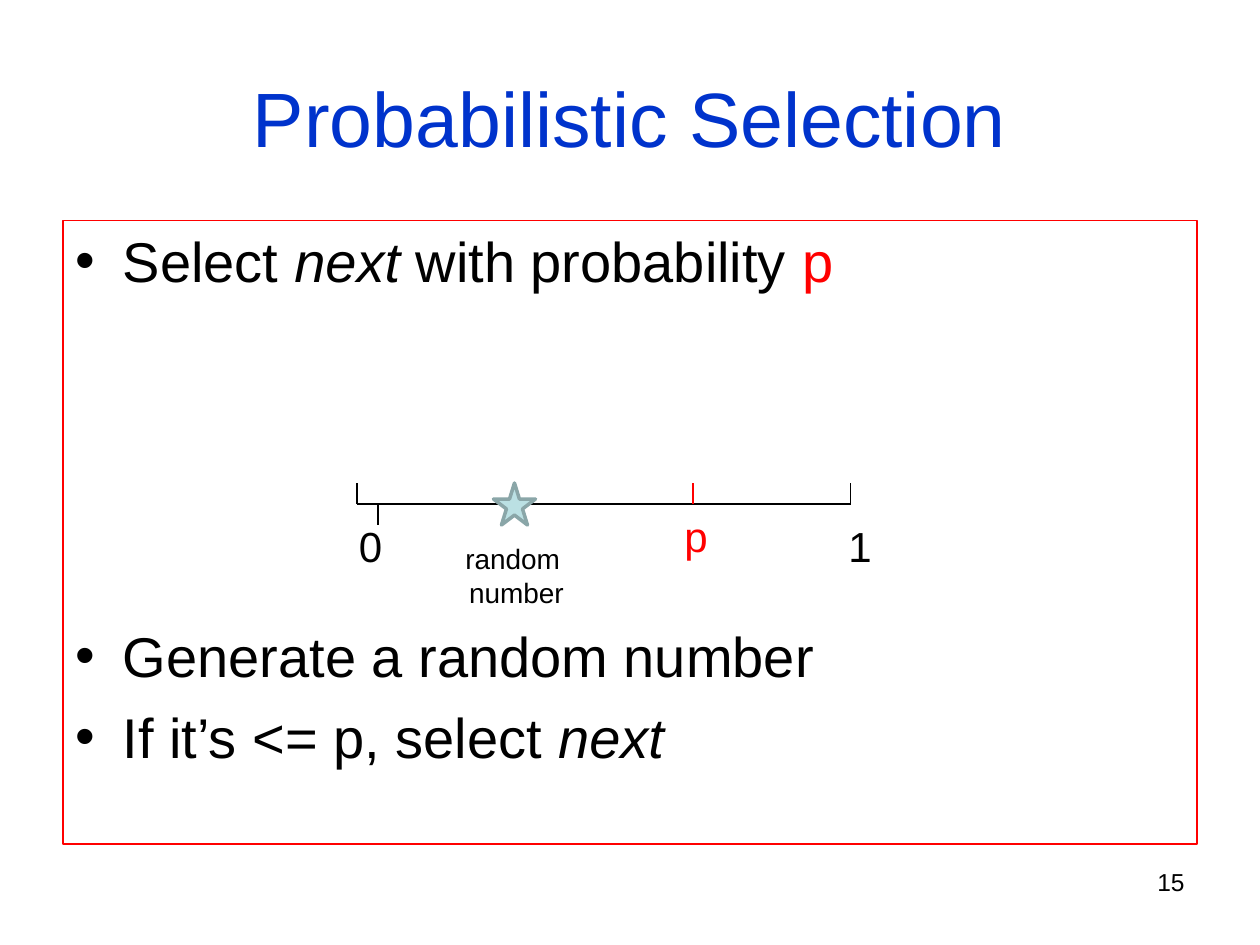
"""Build the slide on probabilistic selection."""
from lxml import etree
from pptx import Presentation
from pptx.dml.color import RGBColor
from pptx.enum.shapes import MSO_CONNECTOR, MSO_SHAPE
from pptx.enum.text import MSO_ANCHOR, MSO_AUTO_SIZE, PP_ALIGN
from pptx.oxml.ns import qn
from pptx.util import Pt

SCALE = 9525
LINE = MSO_CONNECTOR.STRAIGHT
STAR = MSO_SHAPE.STAR_5_POINT
TOP, MID = MSO_ANCHOR.TOP, MSO_ANCHOR.MIDDLE
LEFT, RIGHT, CENTER = PP_ALIGN.LEFT, PP_ALIGN.RIGHT, PP_ALIGN.CENTER
FIXED = MSO_AUTO_SIZE.NONE
HUES = {
    "black": "000000", "red": "FF0000", "blue": "0033CC",
    "pale": "BBE0E3", "edge": "8AA6A8",
}


def px(*vals):
    return [val * SCALE for val in vals]


def hue(name):
    return RGBColor.from_string(HUES[name])


class Deck:
    """Hold the text style and the current slide."""

    def __init__(self, wide, high, font):
        self.file = Presentation()
        self.file.slide_width, self.file.slide_height = px(wide, high)
        self.slide = self.file.slides.add_slide(self.file.slide_layouts[1])
        self.font = font

    def place(self, shape, box):
        names = ("left", "top", "width", "height")
        for name, val in zip(names, px(*box)):
            setattr(shape, name, val)

    def frame(self, shape, **form):
        for name, val in form.items():
            setattr(shape.text_frame, name, val)

    def style(self, para, parts, size, **form):
        for name, val in form.items():
            setattr(para, name, val)
        for text, color, slant in parts:
            run = para.add_run()
            run.text = text
            look = {"name": self.font, "size": Pt(size), "italic": slant}
            for name, val in look.items():
                setattr(run.font, name, val)
            run.font.color.rgb = hue(color)

    def fill(self, shape, rows, size, **form):
        text = shape.text_frame
        for num, (parts, gap) in enumerate(rows):
            para = text.add_paragraph() if num else text.paragraphs[0]
            self.style(para, parts, size, space_before=Pt(gap), **form)

    def title(self, box, text, color, size):
        shape = self.slide.shapes.title
        self.place(shape, box)
        self.frame(shape, vertical_anchor=MID, auto_size=FIXED)
        self.fill(shape, [([(text, color, False)], 0)], size, alignment=CENTER)

    def body(self, box, rows, size, color):
        shape = self.slide.placeholders[1]
        self.place(shape, box)
        self.frame(shape, vertical_anchor=TOP, auto_size=FIXED)
        self.fill(shape, rows, size)
        shape.line.color.rgb = hue(color)
        shape.line.width = Pt(0.75)

    def label(self, box, lines, size, color="black", align=LEFT, wrap=False):
        shape = self.slide.shapes.add_textbox(*px(*box))
        self.frame(shape, word_wrap=wrap)
        rows = [([(line, color, False)], 0) for line in lines]
        self.fill(shape, rows, size, alignment=align)

    def rule(self, start, end, color="black"):
        line = self.slide.shapes.add_connector(LINE, *px(*start, *end))
        line.line.color.rgb = hue(color)
        line.line.width = Pt(0.75)
        etree.SubElement(line._element.spPr, qn("a:effectLst"))

    def star(self, box, color, edge):
        shape = self.slide.shapes.add_shape(STAR, *px(*box))
        shape.shadow.inherit = False
        shape.fill.solid()
        shape.fill.fore_color.rgb = hue(color)
        shape.line.color.rgb = hue(edge)
        shape.line.width = Pt(2)


def main():
    deck = Deck(960, 720, "Arial")
    deck.title((48, 29, 864, 120), "Probabilistic Selection", "blue", 44)
    rows = [
        ([("Select ", "black", False), ("next", "black", True),
          (" with probability ", "black", False), ("p", "red", False)], 8),
        ([("Generate a random number", "black", False)], 187),
        ([("If it’s <= p, select ", "black", False),
          ("next", "black", True)], 8),
    ]
    deck.body((48, 168, 864, 475), rows, 32, "red")
    deck.label((688, 656, 224, 50), ["15"], 14, align=RIGHT, wrap=True)

    low, high, base, tick = 272, 648, 384, 16
    deck.rule((low, base), (high, base))
    for left, rise, color in (
        (low, -tick, "black"), (high, -tick, "black"),
        (528, -tick, "red"), (288, tick, "black"),
    ):
        deck.rule((left, base), (left, base + rise), color)
    for left, top, text, color in (
        (264, 392, "0", "black"), (637, 392, "1", "black"),
        (512, 384, "p", "red"),
    ):
        deck.label((left, top, 37, 49), [text], 24, color)
    deck.star((376, 368, 32, 32), "pale", "edge")
    deck.label((344, 408, 99, 61), ["random ", "number"], 16, align=CENTER)
    deck.file.save("out.pptx")


if __name__ == "__main__":
    main()
